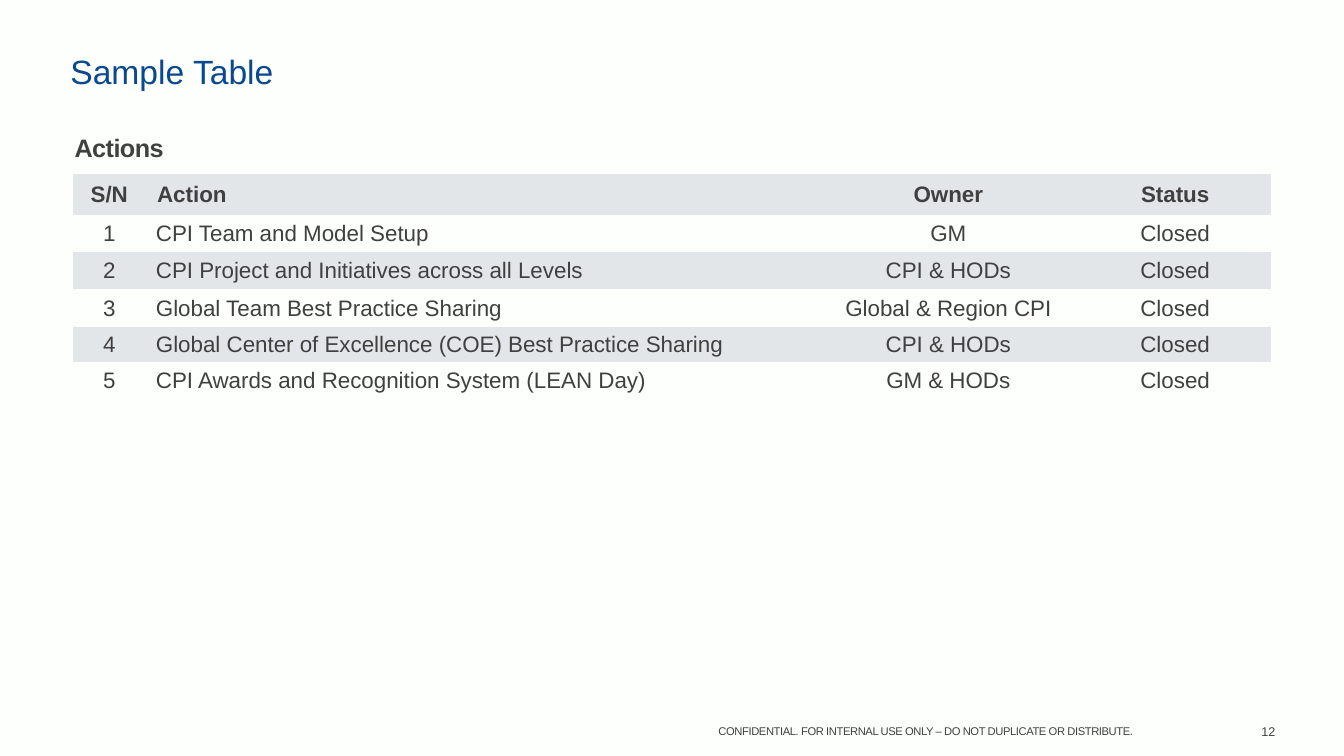
from lxml.etree import SubElement
from pptx import Presentation
from pptx.dml.color import RGBColor
from pptx.enum.text import MSO_ANCHOR, PP_ALIGN
from pptx.oxml.ns import qn
from pptx.util import Cm, Pt

TITLE = "Sample Table"
TABLE_HEADING = "Actions"
FOOTER = "CONFIDENTIAL. FOR INTERNAL USE ONLY –\u00a0DO NOT DUPLICATE OR DISTRIBUTE."
PAGE_NUMBER = "12"
ROWS = [
    ("S/N", "Action", "Owner", "Status"),
    ("1", "CPI Team and Model Setup", "GM", "Closed"),
    ("2", "CPI Project and Initiatives across all Levels", "CPI & HODs", "Closed"),
    ("3", "Global Team Best Practice Sharing", "Global & Region CPI", "Closed"),
    ("4", "Global Center of Excellence (COE) Best Practice Sharing", "CPI & HODs", "Closed"),
    ("5", "CPI Awards and Recognition System (LEAN Day)", "GM & HODs", "Closed"),
]
COLUMN_WIDTHS = [1.85, 16.92, 6.6, 4.83]
ROW_HEIGHTS = [1.19, 1.02, 0.94, 0.94, 0.94, 0.89, 0.94]
ACTION_COLUMN = 1
BACKGROUND, INK, BLUE, BAND = "FDFFFD", "3F403F", "0A498E", "E3E6E8"
PLAIN_STYLE = "{2D5ABB26-0587-4C30-8999-92F81FD0307C}"


def color(value):
    return RGBColor.from_string(value)


def write(frame, text, size, ink=INK, bold=False, align=PP_ALIGN.LEFT, spacing=0):
    para = frame.paragraphs[0]
    para.alignment = align
    span = para.add_run()
    span.text = text
    span.font.name = "Arial"
    span.font.size = Pt(size)
    span.font.bold = bold
    span.font.color.rgb = color(ink)
    if spacing:
        span.font._element.set("spc", str(round(spacing * 100)))
    return para


def add_text(page, left, top, width, height, text, anchor=MSO_ANCHOR.TOP, **look):
    box = page.shapes.add_textbox(Cm(left), Cm(top), Cm(width), Cm(height))
    box.text_frame.word_wrap = True
    box.text_frame.vertical_anchor = anchor
    write(box.text_frame, text, **look)


def format_cell(cell, left=0.03, bottom=0.0, fill=None):
    cell.vertical_anchor = MSO_ANCHOR.MIDDLE
    cell.margin_left, cell.margin_right = Cm(left), Cm(0.03)
    cell.margin_top, cell.margin_bottom = Cm(0.03), Cm(bottom)
    if fill:
        cell.fill.solid()
        cell.fill.fore_color.rgb = color(fill)
    else:
        cell.fill.background()


def add_actions_table(page):
    frame = page.shapes.add_table(
        len(ROW_HEIGHTS), len(COLUMN_WIDTHS),
        Cm(1.83), Cm(3.2), Cm(sum(COLUMN_WIDTHS)), Cm(sum(ROW_HEIGHTS)))
    table = frame.table
    table.horz_banding = False
    properties = table._tbl.tblPr
    style = properties.find(qn("a:tableStyleId"))
    if style is None:
        style = SubElement(properties, qn("a:tableStyleId"))
    style.text = PLAIN_STYLE
    for column, width in zip(table.columns, COLUMN_WIDTHS):
        column.width = Cm(width)
    for row, height in zip(table.rows, ROW_HEIGHTS):
        row.height = Cm(height)

    heading = table.cell(0, 0)
    heading.merge(table.cell(0, len(COLUMN_WIDTHS) - 1))
    format_cell(heading, left=0.05, bottom=0.13)
    para = write(heading.text_frame, TABLE_HEADING, 18, bold=True, spacing=-0.4)
    para.space_after = Pt(3)

    for row, values in enumerate(ROWS, start=1):
        is_header = row == 1
        for column, text in enumerate(values):
            is_action = column == ACTION_COLUMN
            left = (0.28 if is_header else 0.25) if is_action else 0.03
            cell = table.cell(row, column)
            format_cell(cell, left=left, fill=BAND if row % 2 else None)
            write(cell.text_frame, text, 16, bold=is_header,
                  align=PP_ALIGN.LEFT if is_action else PP_ALIGN.CENTER)


def main():
    deck = Presentation()
    deck.slide_width, deck.slide_height = Cm(33.87), Cm(19.05)
    page = deck.slides.add_slide(deck.slide_layouts[5])
    page.background.fill.solid()
    page.background.fill.fore_color.rgb = color(BACKGROUND)

    title = page.shapes.title
    title.left, title.top, title.width, title.height = Cm(1.52), Cm(1.27), Cm(30.84), Cm(1.17)
    title.text_frame.vertical_anchor = MSO_ANCHOR.BOTTOM
    write(title.text_frame, TITLE, 24, ink=BLUE).line_spacing = 0.9

    add_actions_table(page)
    add_text(page, 17.15, 18.14, 12.37, 0.61, FOOTER,
             size=8, align=PP_ALIGN.CENTER, spacing=-0.3)
    add_text(page, 30.84, 18.11, 1.55, 0.64, PAGE_NUMBER,
             anchor=MSO_ANCHOR.MIDDLE, size=9, align=PP_ALIGN.RIGHT)
    deck.save("out.pptx")


if __name__ == "__main__":
    main()
